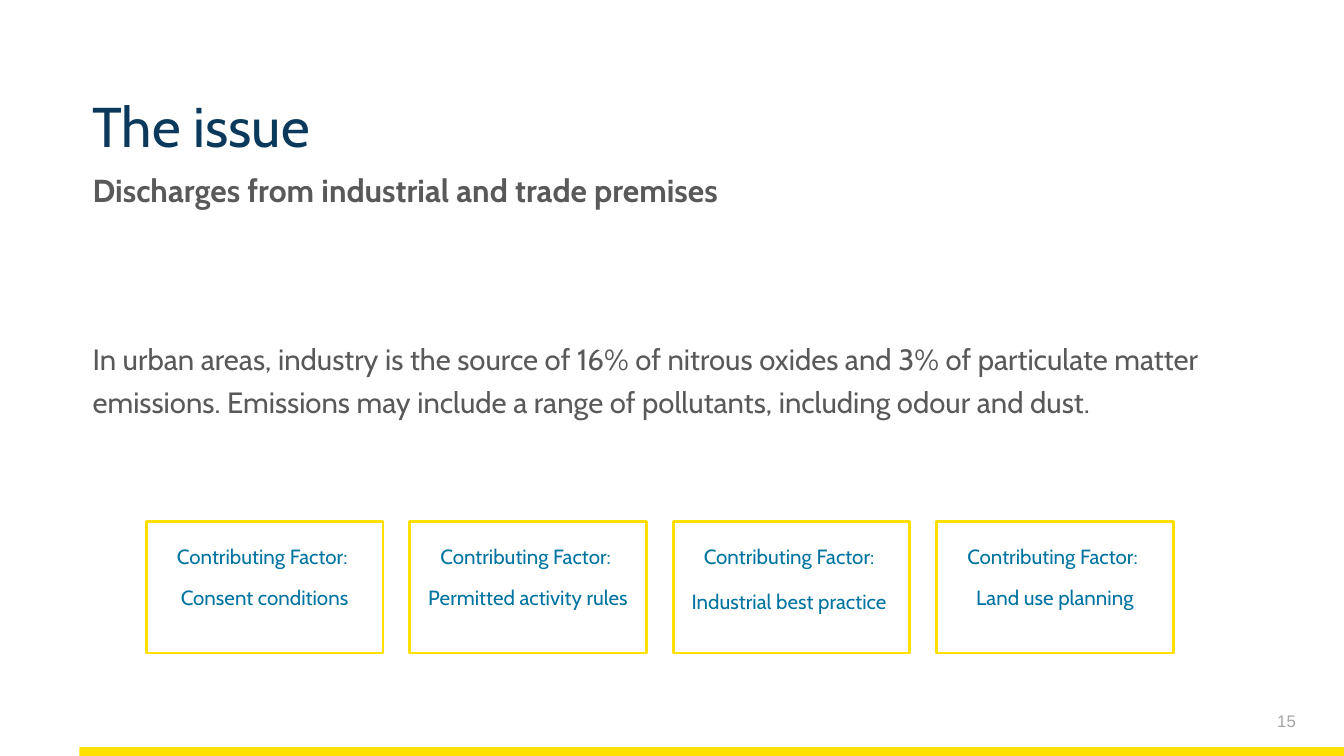
"""Builds the slide on discharges from industrial and trade premises."""
from pptx import Presentation
from pptx.dml.color import RGBColor
from pptx.enum.shapes import MSO_SHAPE
from pptx.enum.text import MSO_ANCHOR, PP_ALIGN
from pptx.util import Inches, Pt

RECTANGLE = MSO_SHAPE.RECTANGLE
TOP, MIDDLE = MSO_ANCHOR.TOP, MSO_ANCHOR.MIDDLE
LEFT, CENTER, RIGHT = PP_ALIGN.LEFT, PP_ALIGN.CENTER, PP_ALIGN.RIGHT
YELLOW = RGBColor(0xFF, 0xE0, 0x00)
NAVY = RGBColor(0x0A, 0x39, 0x5B)
BLUE = RGBColor(0x00, 0x73, 0xA0)
DARK_GRAY = RGBColor(0x59, 0x59, 0x59)
LIGHT_GRAY = RGBColor(0xA6, 0xA6, 0xA6)

SLIDE_WIDTH = 10
SLIDE_HEIGHT = SLIDE_WIDTH * 9 / 16
MARGIN, TEXT_WIDTH = 0.59, 8.72
BOX_LEFT, BOX_TOP, BOX_WIDTH, BOX_HEIGHT, BOX_STEP = 1.09, 3.88, 1.76, 0.98, 1.96

presentation = Presentation()
presentation.slide_width = Inches(SLIDE_WIDTH)
presentation.slide_height = Inches(SLIDE_HEIGHT)
slide = presentation.slides.add_slide(presentation.slide_layouts[6])


def style_paragraph(paragraph, text, size, color, font="Cabin", bold=False,
                    align=LEFT, spacing=1.0, after=0):
    paragraph.text = text
    paragraph.alignment = align
    paragraph.line_spacing = spacing
    paragraph.space_after = Pt(after)
    paragraph.font.name = font
    paragraph.font.size = Pt(size)
    paragraph.font.bold = bold
    paragraph.font.color.rgb = color


def add_rectangle(left, top, width, height):
    shape = slide.shapes.add_shape(
        RECTANGLE, Inches(left), Inches(top), Inches(width), Inches(height))
    shape.shadow.inherit = False
    return shape


footer_bar = add_rectangle(MARGIN, 5.56, SLIDE_WIDTH - MARGIN, 0.08)
footer_bar.fill.solid()
footer_bar.fill.fore_color.rgb = YELLOW
footer_bar.line.fill.background()

statement = ("In urban areas, industry is the source of 16% of nitrous oxides and 3% of "
             "particulate matter emissions. Emissions may include a range of pollutants, "
             "including odour and dust.")
texts = [
    (MARGIN, 0.76, TEXT_WIDTH, 0.41, MIDDLE,
     dict(text="The issue", size=30, color=NAVY, spacing=0.9)),
    (MARGIN, 1.2, TEXT_WIDTH, 0.28, TOP,
     dict(text="Discharges from industrial and trade premises", size=17,
          color=DARK_GRAY, bold=True, spacing=Pt(22), after=2)),
    (MARGIN, 2.43, TEXT_WIDTH, 0.76, TOP,
     dict(text=statement, size=15.7, color=DARK_GRAY, spacing=Pt(23), after=2)),
    (7.49, 5.21, 2.25, 0.3, MIDDLE,
     dict(text="15", size=9, color=LIGHT_GRAY, font="Arial", align=RIGHT)),
]
for left, top, width, height, anchor, style in texts:
    text_box = slide.shapes.add_textbox(
        Inches(left), Inches(top), Inches(width), Inches(height))
    text_box.text_frame.word_wrap = True
    text_box.text_frame.vertical_anchor = anchor
    style_paragraph(text_box.text_frame.paragraphs[0], **style)

factors = [
    ("Consent conditions", 1.5),
    ("Permitted activity rules", 1.5),
    ("Industrial best practice ", Pt(22)),
    ("Land use planning", 1.5),
]
for column, (factor, spacing) in enumerate(factors):
    factor_box = add_rectangle(
        BOX_LEFT + column * BOX_STEP, BOX_TOP, BOX_WIDTH, BOX_HEIGHT)
    factor_box.fill.background()
    factor_box.line.color.rgb = YELLOW
    factor_box.line.width = Pt(1.5)
    frame = factor_box.text_frame
    frame.word_wrap = True
    frame.vertical_anchor = TOP
    style_paragraph(frame.paragraphs[0], "Contributing Factor: ", 11, BLUE,
                    align=CENTER, spacing=Pt(22), after=2)
    style_paragraph(frame.add_paragraph(), factor, 11, BLUE,
                    align=CENTER, spacing=spacing, after=2)

presentation.save("out.pptx")
